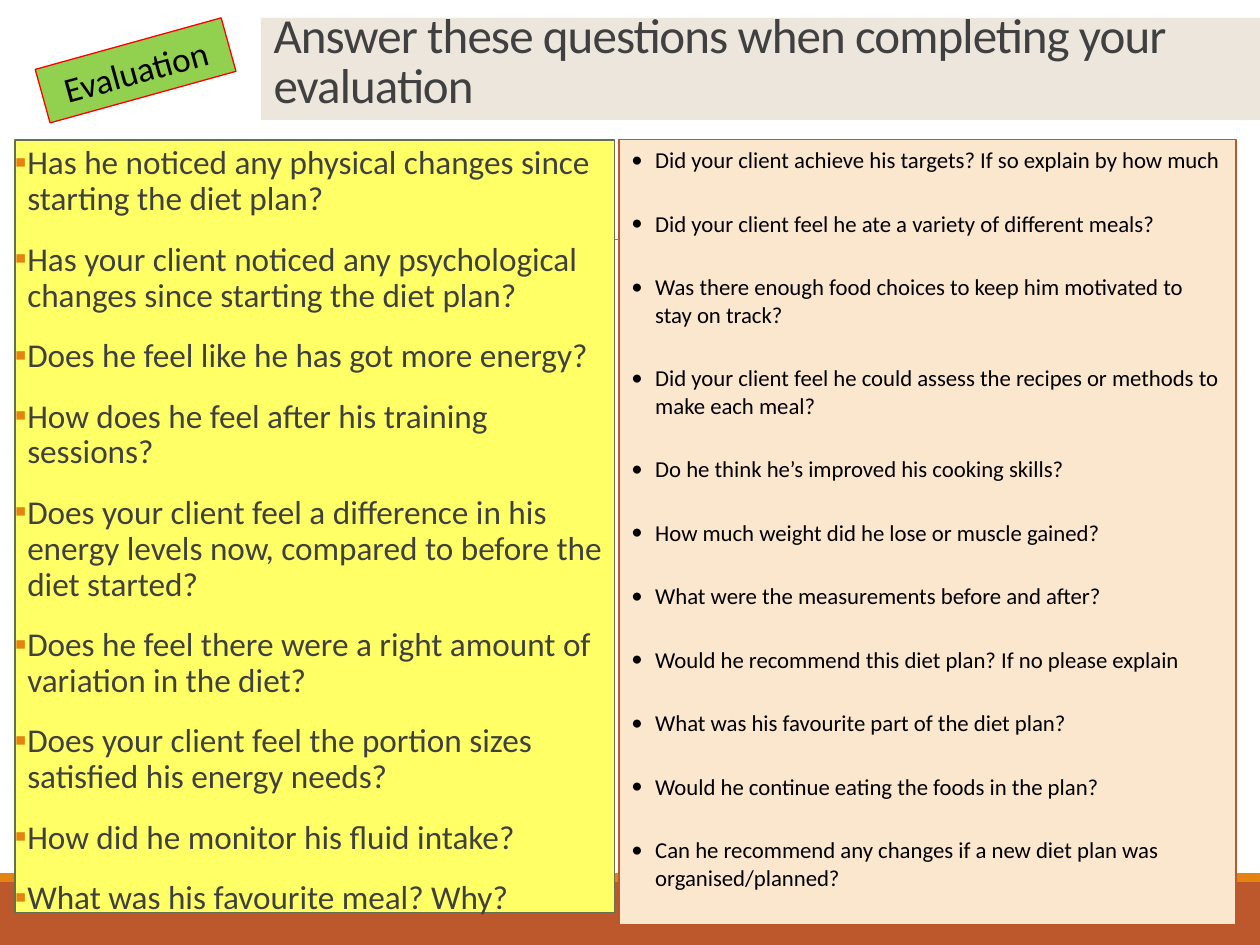
from dataclasses import dataclass

from lxml import etree
from pptx import Presentation
from pptx.dml.color import RGBColor
from pptx.enum.shapes import MSO_CONNECTOR, MSO_SHAPE
from pptx.enum.text import MSO_ANCHOR, MSO_AUTO_SIZE, PP_ALIGN
from pptx.oxml.ns import qn
from pptx.util import Cm, Pt

RECTANGLE = MSO_SHAPE.RECTANGLE
STRAIGHT = MSO_CONNECTOR.STRAIGHT
TOP, BOTTOM = MSO_ANCHOR.TOP, MSO_ANCHOR.BOTTOM
LEFT, CENTER = PP_ALIGN.LEFT, PP_ALIGN.CENTER
NO_AUTOFIT = MSO_AUTO_SIZE.NONE

FONT = "Calibri"
COLORS = {
    "rust": "BD582C",
    "orange": "E48312",
    "rule": "808080",
    "beige": "ECE6DD",
    "charcoal": "404040",
    "yellow": "FFFF66",
    "olive": "637052",
    "peach": "FBE6CE",
    "green": "92D050",
    "red": "FF0000",
    "black": "000000",
}


@dataclass(frozen=True)
class Area:
    left: float
    top: float
    width: float
    height: float


@dataclass(frozen=True)
class ListStyle:
    bullet: str
    bullet_color: str
    text_color: str
    size: float
    indent: float
    line_spacing: float
    before: float
    after: float


BANDS = [
    (Area(0, 17.78, 25.4, 1.27), "rust"),
    (Area(0, 17.6, 25.4, 0.18), "orange"),
]
TITLE_AREA = Area(5.26, 0.36, 22.33, 2.06)
CLIENT_AREA = Area(0.3, 2.82, 12.09, 15.57)
PLAN_AREA = Area(12.48, 2.82, 12.44, 15.82)
LABEL_AREA = Area(0.79, 0.86, 3.89, 1.12)

CLIENT_STYLE = ListStyle("▪", "orange", "charcoal", 19, 0.25, 0.9, 12, 2)
PLAN_STYLE = ListStyle("•", "black", "black", 13, 0.48, 1, 20.7, 0)

CLIENT_QUESTIONS = [
    "Has he noticed any physical changes since starting the diet plan?",
    "Has your client noticed any psychological changes since starting the diet plan?",
    "Does he feel like he has got more energy?",
    "How does he feel after his training sessions?",
    "Does your client feel a difference in his energy levels now, compared to before the diet started?",
    "Does he feel there were a right amount of variation in the diet?",
    "Does your client feel the portion sizes satisfied his energy needs?",
    "How did he monitor his fluid intake?",
    "What was his favourite meal? Why?",
]
PLAN_QUESTIONS = [
    "Did your client achieve his targets? If so explain by how much",
    "Did your client feel he ate a variety of different meals?",
    "Was there enough food choices to keep him motivated to stay on track?",
    "Did your client feel he could assess the recipes or methods to make each meal?",
    "Do he think he’s improved his cooking skills?",
    "How much weight did he lose or muscle gained?",
    "What were the measurements before and after?",
    "Would he recommend this diet plan? If no please explain",
    "What was his favourite part of the diet plan?",
    "Would he continue eating the foods in the plan?",
    "Can he recommend any changes if a new diet plan was organised/planned?",
]


def color(name: str) -> RGBColor:
    return RGBColor.from_string(COLORS[name])


def place(box, area: Area) -> None:
    box.left, box.top = Cm(area.left), Cm(area.top)
    box.width, box.height = Cm(area.width), Cm(area.height)


def paint(box, fill: str, line: str | None = None) -> None:
    box.fill.solid()
    box.fill.fore_color.rgb = color(fill)
    if line:
        box.line.color.rgb = color(line)
        box.line.width = Pt(0.75)
    else:
        box.line.fill.background()


def add_rectangle(page, area: Area, fill: str, line: str | None = None):
    box = page.shapes.add_shape(
        RECTANGLE, Cm(area.left), Cm(area.top), Cm(area.width), Cm(area.height)
    )
    box.shadow.inherit = False
    paint(box, fill, line)
    return box


def set_font(para, size: float, font_color: str) -> None:
    para.font.name = FONT
    para.font.size = Pt(size)
    para.font.color.rgb = color(font_color)


def set_bullet(para, style: ListStyle) -> None:
    properties = para._p.get_or_add_pPr()
    indent = Cm(style.indent)
    properties.set("marL", str(indent))
    properties.set("indent", str(-indent))
    bullet_color = etree.SubElement(properties, qn("a:buClr"))
    etree.SubElement(bullet_color, qn("a:srgbClr"), val=COLORS[style.bullet_color])
    etree.SubElement(properties, qn("a:buFont"), typeface=FONT)
    etree.SubElement(properties, qn("a:buChar"), char=style.bullet)


def fill_list(box, questions: list[str], style: ListStyle) -> None:
    frame = box.text_frame
    frame.word_wrap = True
    frame.auto_size = NO_AUTOFIT
    frame.vertical_anchor = TOP
    frame.text = "\n".join(questions)
    for para in frame.paragraphs:
        set_bullet(para, style)
        set_font(para, style.size, style.text_color)
        para.alignment = LEFT
        para.line_spacing = style.line_spacing
        para.space_before = Pt(style.before)
        para.space_after = Pt(style.after)


def add_background(page, front) -> None:
    for area, fill in BANDS:
        front.element.addprevious(add_rectangle(page, area, fill).element)
    rule = page.shapes.add_connector(STRAIGHT, Cm(2.49), Cm(4.83), Cm(23.24), Cm(4.83))
    rule.line.color.rgb = color("rule")
    rule.line.width = Pt(0.5)
    etree.SubElement(rule.element.spPr, qn("a:effectLst"))
    front.element.addprevious(rule.element)


def fill_title(title) -> None:
    place(title, TITLE_AREA)
    paint(title, "beige")
    frame = title.text_frame
    frame.text = "Answer these questions when completing your evaluation"
    frame.word_wrap = True
    frame.auto_size = NO_AUTOFIT
    frame.vertical_anchor = BOTTOM
    para = frame.paragraphs[0]
    para.alignment = LEFT
    para.line_spacing = 0.85
    set_font(para, 28, "charcoal")
    para._p.pPr.find(qn("a:defRPr")).set("spc", "-50")


def add_label(page) -> None:
    label = add_rectangle(page, LABEL_AREA, "green", "red")
    label.rotation = 344.5
    label.text_frame.text = "Evaluation"
    para = label.text_frame.paragraphs[0]
    para.alignment = CENTER
    set_font(para, 20, "black")


def main() -> None:
    deck = Presentation()
    deck.slide_width, deck.slide_height = Cm(25.4), Cm(19.05)
    page = deck.slides.add_slide(deck.slide_layouts[1])
    title, body = page.shapes.title, page.placeholders[1]

    add_background(page, title)
    fill_title(title)
    place(body, CLIENT_AREA)
    paint(body, "yellow", "olive")
    body.text_frame.margin_left = body.text_frame.margin_right = 0
    fill_list(body, CLIENT_QUESTIONS, CLIENT_STYLE)
    plan = add_rectangle(page, PLAN_AREA, "peach", "rust")
    fill_list(plan, PLAN_QUESTIONS, PLAN_STYLE)
    add_label(page)
    deck.save("out.pptx")


if __name__ == "__main__":
    main()
